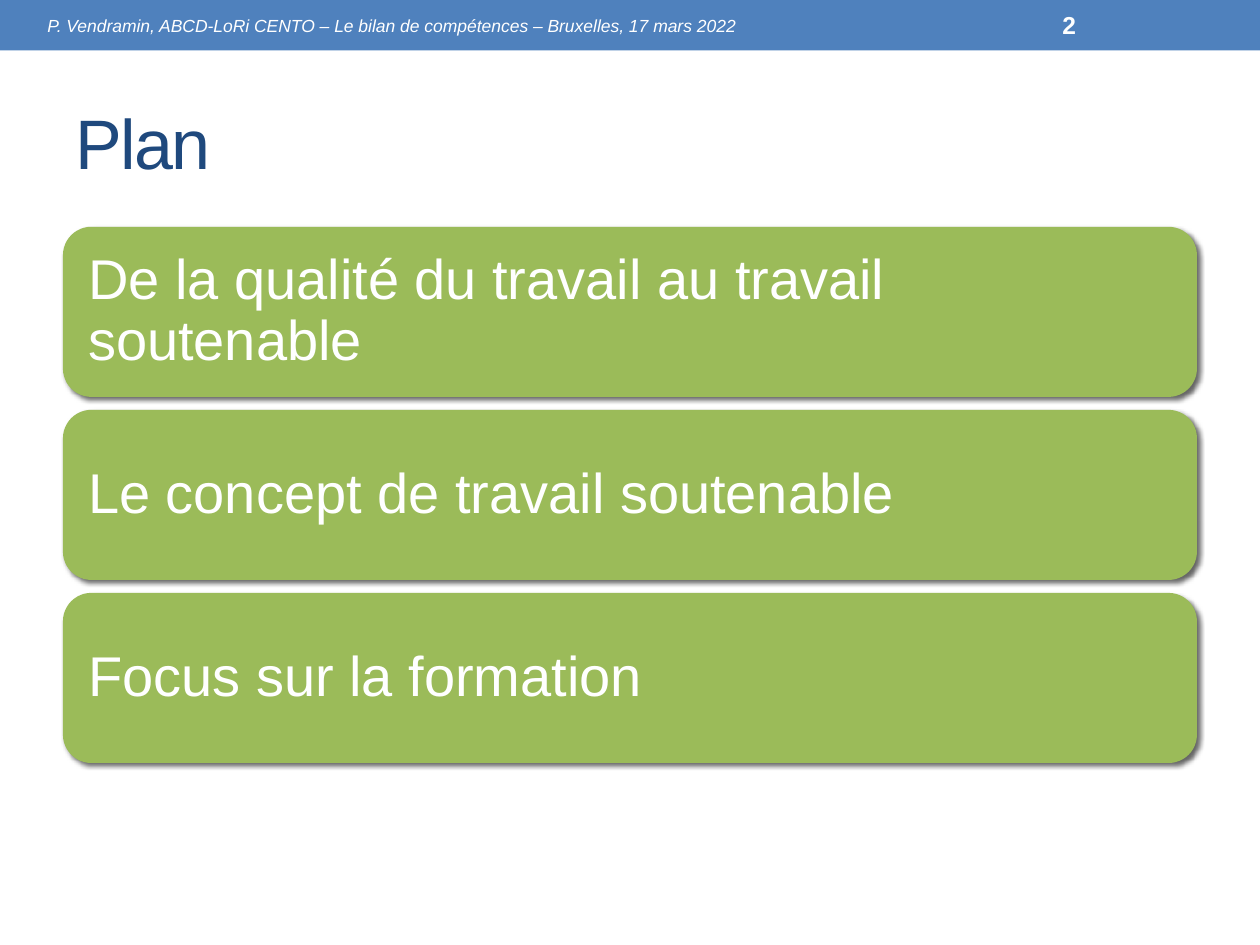
from dataclasses import dataclass

from lxml import etree
from pptx import Presentation
from pptx import util as u
from pptx.dml.color import RGBColor
from pptx.enum import shapes, text
from pptx.oxml import ns


@dataclass(frozen=True)
class Theme:
    font: str = "Arial"
    bar: RGBColor = RGBColor(0x4F, 0x81, 0xBD)
    title: RGBColor = RGBColor(0x1F, 0x49, 0x7D)
    card: RGBColor = RGBColor(0x9B, 0xBB, 0x59)
    light: RGBColor = RGBColor(0xFF, 0xFF, 0xFF)
    title_size: float = 40
    card_size: float = 32
    footer_size: float = 10
    number_size: float = 14


@dataclass(frozen=True)
class Box:
    left: float
    top: float
    width: float
    height: float

    def points(self) -> tuple:
        return tuple(u.Pt(v) for v in (self.left, self.top, self.width, self.height))


@dataclass(frozen=True)
class BarText:
    box: Box
    words: str
    size: float
    bold: bool = False
    italic: bool = False


THEME = Theme()
BAR = Box(0, 0, 720, 28.8)
TITLE = Box(36, 42, 648, 78)
FIRST_CARD = Box(36, 129.6, 648, 97.2)
CARD_GAP = 7.4
CARD_INSET = 9.6

BAR_TEXTS = [
    BarText(Box(20, 1.4, 574, 26),
            "P. Vendramin, ABCD-LoRi CENTO – Le bilan de compétences – Bruxelles, 17 mars 2022",
            THEME.footer_size, italic=True),
    BarText(Box(600, 1.4, 84, 26), "2", THEME.number_size, bold=True),
]
TOPICS = [
    "De la qualité du travail au travail soutenable",
    "Le concept de travail soutenable",
    "Focus sur la formation",
]


def write(sp, words: str, size: float, color: RGBColor):
    """Put one left-aligned, vertically centred paragraph in a shape."""
    tf = sp.text_frame
    tf.text = words
    tf.word_wrap = True
    tf.vertical_anchor = text.MSO_ANCHOR.MIDDLE
    p = tf.paragraphs[0]
    p.alignment = text.PP_ALIGN.LEFT
    r = p.runs[0]
    r.font.name = THEME.font
    r.font.size = u.Pt(size)
    r.font.color.rgb = color
    return p, r


def add_block(s, kind, box: Box, fill: RGBColor):
    sp = s.shapes.add_shape(kind, *box.points())
    sp.shadow.inherit = False
    sp.fill.solid()
    sp.fill.fore_color.rgb = fill
    sp.line.fill.background()
    return sp


def add_shadow(sp) -> None:
    """Soft black shadow to the lower right."""
    effects = sp._element.spPr.find(ns.qn("a:effectLst"))
    shadow = etree.SubElement(effects, ns.qn("a:outerShdw"), blurRad=str(u.Pt(3)),
                              dist=str(u.Pt(2)), dir=str(45 * 60000),
                              algn="tl", rotWithShape="0")
    color = etree.SubElement(shadow, ns.qn("a:srgbClr"), val="000000")
    etree.SubElement(color, ns.qn("a:alpha"), val="60000")


def add_bar_text(s, item: BarText) -> None:
    sp = s.shapes.add_textbox(*item.box.points())
    p, r = write(sp, item.words, item.size, THEME.light)
    p.space_after = u.Pt(6)
    r.font.bold = item.bold
    r.font.italic = item.italic


def add_card(s, index: int, words: str) -> None:
    first = FIRST_CARD
    top = first.top + index * (first.height + CARD_GAP)
    box = Box(first.left, top, first.width, first.height)
    sp = add_block(s, shapes.MSO_SHAPE.ROUNDED_RECTANGLE, box, THEME.card)
    add_shadow(sp)
    p, _ = write(sp, words, THEME.card_size, THEME.light)
    p.line_spacing = 0.9
    p.space_after = u.Pt(11.2)
    tf = sp.text_frame
    tf.margin_left = tf.margin_right = u.Pt(CARD_INSET)
    tf.margin_top = tf.margin_bottom = u.Pt(CARD_INSET)


def main() -> None:
    prs = Presentation()
    prs.slide_width, prs.slide_height = u.Pt(720), u.Pt(540)
    s = prs.slides.add_slide(prs.slide_layouts[5])

    # Header bar with footer text and slide number
    add_block(s, shapes.MSO_SHAPE.RECTANGLE, BAR, THEME.bar)
    for item in BAR_TEXTS:
        add_bar_text(s, item)

    # Title
    title = s.shapes.title
    title.left, title.top, title.width, title.height = TITLE.points()
    _, r = write(title, "Plan", THEME.title_size, THEME.title)
    r.font._element.set("spc", "-100")

    # Topic cards
    for index, words in enumerate(TOPICS):
        add_card(s, index, words)

    prs.save("out.pptx")


if __name__ == "__main__":
    main()
